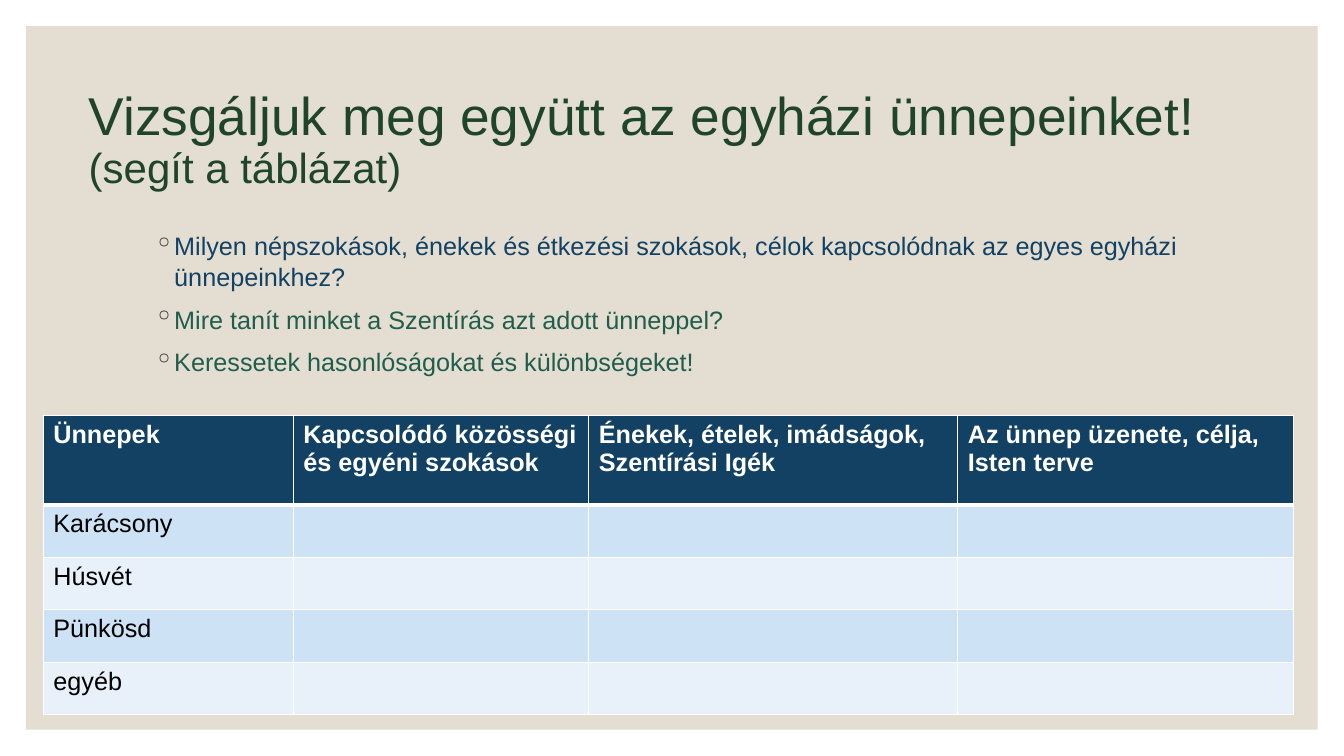
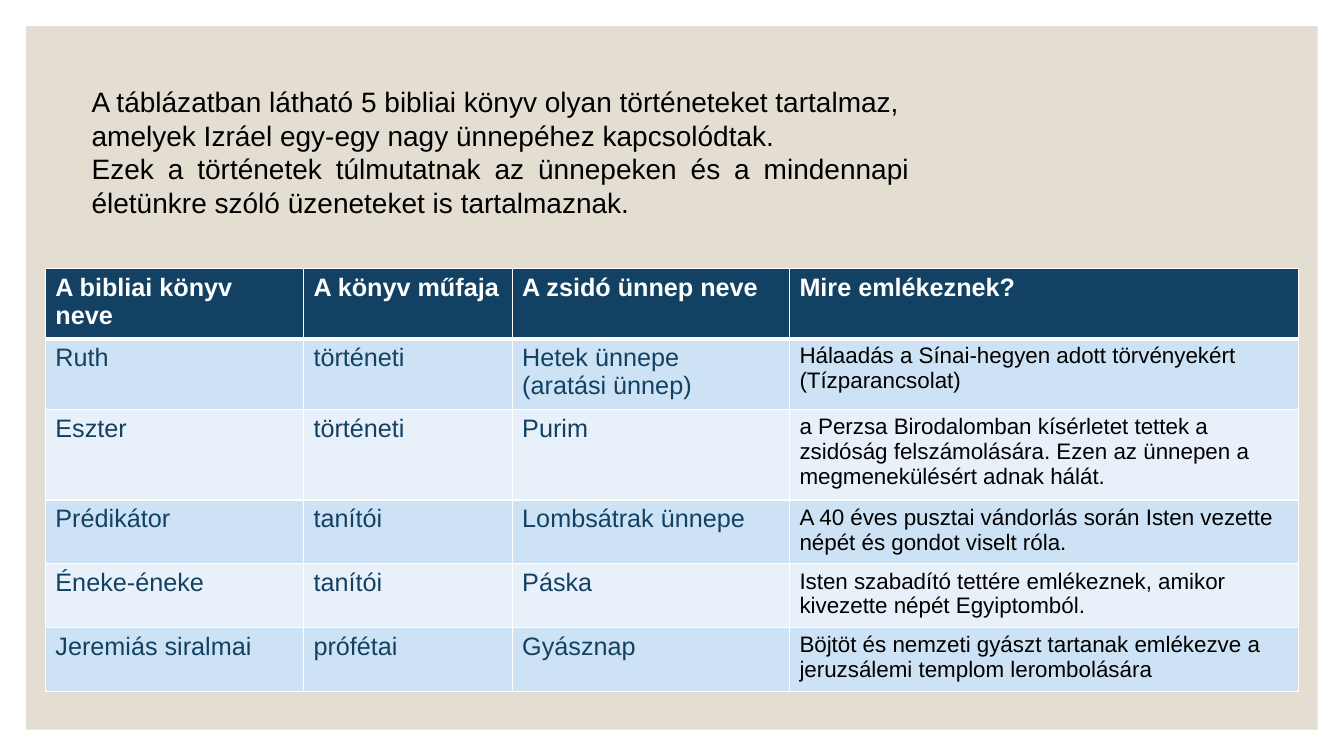
import pptx
import pptx.dml.color
import pptx.enum.shapes
import pptx.enum.text
import pptx.oxml
import pptx.oxml.ns
import pptx.util

Inches = pptx.util.Inches
Pt = pptx.util.Pt
ALIGN = pptx.enum.text.PP_ALIGN

FONT = "Arial"
WHITE, BLACK, NAVY, GREEN, TEAL = "FFFFFF", "000000", "134163", "1F442A", "215D4C"
PANEL, BULLET = "E3DED1", "262626"
BANDS = ("CDE3F5", "E8F1FA")
WIDTH, HEIGHT, MARGIN = 13.33, 7.5, 0.26

TITLE = [("Vizsgáljuk meg együtt az egyházi ünnepeinket!", 38), ("(segít a táblázat)", 30)]
QUESTIONS = [
    ("Milyen népszokások, énekek és étkezési szokások, célok kapcsolódnak az egyes egyházi ünnepeinkhez?", NAVY),
    ("Mire tanít minket a Szentírás azt adott ünneppel?", TEAL),
    ("Keressetek hasonlóságokat és különbségeket!", TEAL),
]
INTRODUCTION = [
    "A táblázatban látható 5 bibliai könyv olyan történeteket tartalmaz,",
    "amelyek Izráel egy-egy nagy ünnepéhez kapcsolódtak.",
    "Ezek a történetek túlmutatnak az ünnepeken és a mindennapi életünkre szóló üzeneteket is tartalmaznak.",
]
FEASTS = {
    "at": (0.43, 4.12),
    "columns": [2.48, 2.93, 3.66, 3.33],
    "rows": [0.89] + [0.52] * 4,
    "styles": [(18, BLACK)] * 4,
    "cells": [
        ("Ünnepek", "Kapcsolódó közösségi és egyéni szokások",
         "Énekek, ételek, imádságok, Szentírási Igék", "Az ünnep üzenete, célja,\nIsten terve"),
        ("Karácsony", "", "", ""),
        ("Húsvét", "", "", ""),
        ("Pünkösd", "", "", ""),
        ("egyéb", "", "", ""),
    ],
}
BOOKS = {
    "at": (0.45, 2.66),
    "columns": [2.56, 2.07, 2.75, 5.05],
    "rows": [0.65, 0.67, 0.84, 0.59, 0.59, 0.59],
    "styles": [(18, NAVY)] * 3 + [(16, BLACK)],
    "cells": [
        ("A bibliai könyv neve", "A könyv műfaja", "A zsidó ünnep neve", "Mire emlékeznek?"),
        ("Ruth", "történeti", "Hetek ünnepe\n(aratási ünnep)",
         "Hálaadás a Sínai-hegyen adott törvényekért (Tízparancsolat)"),
        ("Eszter", "történeti", "Purim",
         "a Perzsa Birodalomban kísérletet tettek a\nzsidóság felszámolására. Ezen az ünnepen a\n"
         "megmenekülésért adnak hálát."),
        ("Prédikátor", "tanítói", "Lombsátrak ünnepe",
         "A 40 éves pusztai vándorlás során Isten vezette népét és gondot viselt róla."),
        ("Éneke-éneke", "tanítói", "Páska",
         "Isten szabadító tettére emlékeznek, amikor kivezette népét Egyiptomból."),
        ("Jeremiás siralmai", "prófétai", "Gyásznap",
         "Böjtöt és nemzeti gyászt tartanak emlékezve a jeruzsálemi templom lerombolására"),
    ],
}


def color(value):
    return pptx.dml.color.RGBColor.from_string(value)


def add_run(paragraph, text, size, value, bold=False):
    run = paragraph.add_run()
    run.text = text
    run.font.name = FONT
    run.font.size = Pt(size)
    run.font.bold = bold
    run.font.color.rgb = color(value)


def add_paragraphs(frame, items):
    for index, (text, size, value, bold) in enumerate(items):
        paragraph = frame.paragraphs[0] if index == 0 else frame.add_paragraph()
        add_run(paragraph, text, size, value, bold)


def add_text_box(slide, box, items):
    frame = slide.shapes.add_textbox(*map(Inches, box)).text_frame
    frame.word_wrap = True
    add_paragraphs(frame, items)
    return frame


def add_xml(parent, index, xml):
    namespace = pptx.oxml.ns.nsdecls("a")
    parent.insert(index, pptx.oxml.parse_xml(xml.replace(" ", f" {namespace} ", 1)))


def add_bullet(paragraph):
    properties = paragraph._p.get_or_add_pPr()
    properties.set("marL", str(Inches(0.2)))
    properties.set("indent", str(-Inches(0.2)))
    add_xml(properties, len(properties), f'<a:buClr ><a:srgbClr val="{BULLET}"/></a:buClr>')
    add_xml(properties, len(properties), '<a:buChar char="◦"/>')


def set_borders(cell, row_index):
    widths = {"L": 1, "R": 1, "T": 3 if row_index == 1 else 1, "B": 3 if row_index == 0 else 1}
    properties = cell._tc.get_or_add_tcPr()
    for index, (side, width) in enumerate(widths.items()):
        add_xml(properties, index, f'<a:ln{side} w="{Pt(width)}"><a:solidFill>'
                                   f'<a:srgbClr val="{WHITE}"/></a:solidFill></a:ln{side}>')


def add_table(slide, data):
    columns, rows = data["columns"], data["rows"]
    box = (*data["at"], sum(columns), sum(rows))
    table = slide.shapes.add_table(len(rows), len(columns), *map(Inches, box)).table
    for column, width in zip(table.columns, columns):
        column.width = Inches(width)
    for row_index, texts in enumerate(data["cells"]):
        table.rows[row_index].height = Inches(rows[row_index])
        header = row_index == 0
        for column_index, text in enumerate(texts):
            cell = table.cell(row_index, column_index)
            cell.fill.solid()
            cell.fill.fore_color.rgb = color(NAVY if header else BANDS[(row_index - 1) % 2])
            set_borders(cell, row_index)
            size, value = (18, WHITE) if header else data["styles"][column_index]
            if text:
                add_paragraphs(cell.text_frame, [(line, size, value, header) for line in text.split("\n")])


def add_master_panel(presentation, slide):
    box = (MARGIN, MARGIN, WIDTH - 2 * MARGIN, HEIGHT - 2 * MARGIN)
    panel = slide.shapes.add_shape(pptx.enum.shapes.MSO_SHAPE.RECTANGLE, *map(Inches, box))
    panel.shadow.inherit = False
    panel.fill.solid()
    panel.fill.fore_color.rgb = color(PANEL)
    panel.line.fill.background()
    presentation.slide_master.element.cSld.spTree.insert(2, panel.element)


def set_title(slide):
    title = slide.shapes.title
    title.left, title.top, title.width, title.height = map(Inches, (0.78, 0.67, 12.06, 1.46))
    title.text_frame.vertical_anchor = pptx.enum.text.MSO_ANCHOR.MIDDLE
    paragraph = title.text_frame.paragraphs[0]
    paragraph.alignment = ALIGN.LEFT
    paragraph.line_spacing = 0.9
    for index, (text, size) in enumerate(TITLE):
        if index:
            paragraph.add_line_break()
        add_run(paragraph, text, size, GREEN)


def build_feasts_slide(slide):
    set_title(slide)
    frame = add_text_box(slide, (1.43, 2.24, 10.47, 1.66),
                         [(text, 18, value, False) for text, value in QUESTIONS])
    for paragraph in frame.paragraphs:
        paragraph.space_before = Pt(9)
        add_bullet(paragraph)
    add_table(slide, FEASTS)


def build_books_slide(slide):
    add_table(slide, BOOKS)
    frame = add_text_box(slide, (0.81, 0.79, 8.31, 1.45),
                         [(text, 20, BLACK, False) for text in INTRODUCTION])
    for paragraph in frame.paragraphs:
        paragraph.alignment = ALIGN.JUSTIFY


def main():
    presentation = pptx.Presentation()
    presentation.slide_width = Inches(WIDTH)
    presentation.slide_height = Inches(HEIGHT)
    title_only, blank = presentation.slide_layouts[5], presentation.slide_layouts[6]
    feasts_slide = presentation.slides.add_slide(title_only)
    add_master_panel(presentation, feasts_slide)
    build_feasts_slide(feasts_slide)
    build_books_slide(presentation.slides.add_slide(blank))
    presentation.save("out.pptx")


if __name__ == "__main__":
    main()
